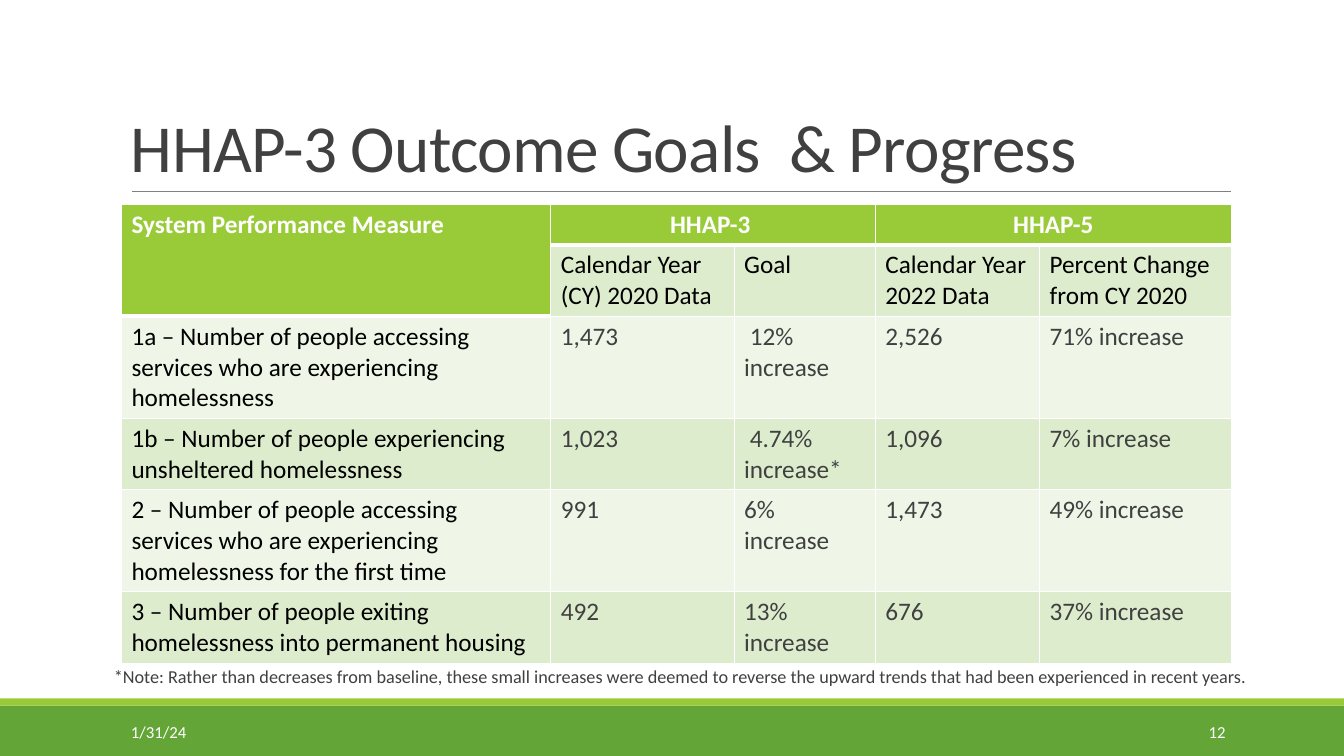
import pptx
import pptx.util
import pptx.dml.color
import pptx.enum.shapes
import pptx.enum.text
import pptx.oxml
import pptx.oxml.ns
import lxml.etree

Cm = pptx.util.Cm
Pt = pptx.util.Pt
RGBColor = pptx.dml.color.RGBColor
ALIGN = pptx.enum.text.PP_ALIGN
ANCHOR = pptx.enum.text.MSO_ANCHOR
qn = pptx.oxml.ns.qn

GREEN = RGBColor(0x63, 0xA5, 0x37)
LIME = RGBColor(0x99, 0xCB, 0x38)
MINT = RGBColor(0xDE, 0xEC, 0xCE)
PALE = RGBColor(0xEF, 0xF6, 0xE8)
WHITE = RGBColor(0xFF, 0xFF, 0xFF)
BLACK = RGBColor(0, 0, 0)
DARK = RGBColor(0x40, 0x40, 0x40)
GRAY = RGBColor(0x80, 0x80, 0x80)

WIDE, TALL = 33.87, 19.05
COLS = [10.82, 4.62, 3.56, 4.14, 4.83]
ONE, TWO, THREE = 1.03, 1.8, 2.57
ROWS = [ONE, TWO, THREE, TWO, THREE, TWO]
DATA = [
    ["System Performance Measure", "HHAP-3 ", "", "HHAP-5", ""],
    ["", "Calendar Year (CY) 2020 Data", "Goal",
     "Calendar Year 2022 Data", "Percent Change from CY 2020"],
    ["1a – Number of people accessing services who are experiencing homelessness",
     "1,473", " 12% increase", "2,526", "71% increase"],
    ["1b – Number of people experiencing unsheltered homelessness",
     "1,023", " 4.74% increase*", "1,096", "7% increase"],
    ["2 – Number of people accessing services who are experiencing "
     "homelessness for the first time",
     "991", "6% increase", "1,473", "49% increase"],
    ["3 – Number of people exiting homelessness into permanent housing",
     "492", "13% increase", "676", "37% increase"],
]
SPANS = [((0, 0), (1, 0)), ((0, 1), (0, 2)), ((0, 3), (0, 4))]


def write(frame, text, size=18, color=DARK, bold=False, align=ALIGN.LEFT,
          lead=None, before=None, after=None, track=None):
    para = frame.paragraphs[0]
    para.alignment = align
    para.line_spacing = lead
    para.space_before = before
    para.space_after = after
    run = para.add_run()
    run.text = text
    run.font.name = "Calibri"
    run.font.size = Pt(size)
    run.font.bold = bold
    run.font.color.rgb = color
    if track is not None:
        run._r.get_or_add_rPr().set("spc", str(track))


def is_head(row, col):
    return row == 0 or (row == 1 and col == 0)


class Deck:
    def __init__(self):
        self.show = pptx.Presentation()
        self.show.slide_width = Cm(WIDE)
        self.show.slide_height = Cm(TALL)
        self.slide = self.show.slides.add_slide(self.show.slide_layouts[6])
        self.shapes = self.slide.shapes

    def band(self, top, high, color):
        kind = pptx.enum.shapes.MSO_SHAPE.RECTANGLE
        band = self.shapes.add_shape(kind, 0, Cm(top), Cm(WIDE), Cm(high))
        band.shadow.inherit = False
        band.fill.solid()
        band.fill.fore_color.rgb = color
        band.line.fill.background()

    def rule(self, left, right, top):
        kind = pptx.enum.shapes.MSO_CONNECTOR.STRAIGHT
        rule = self.shapes.add_connector(kind, Cm(left), Cm(top), Cm(right), Cm(top))
        rule.line.color.rgb = GRAY
        rule.line.width = Pt(0.5)
        lxml.etree.SubElement(rule._element.spPr, qn("a:effectLst"))

    def label(self, text, left, top, wide, high, anchor=ANCHOR.TOP, side=0.25, **style):
        box = self.shapes.add_textbox(Cm(left), Cm(top), Cm(wide), Cm(high))
        frame = box.text_frame
        frame.word_wrap = True
        frame.vertical_anchor = anchor
        frame.margin_left = frame.margin_right = Cm(side)
        write(frame, text, **style)

    def edge(self, cell, side, width):
        props = cell._tc.get_or_add_tcPr()
        line = lxml.etree.SubElement(props, qn("a:ln" + side), w=str(Pt(width)))
        fill = lxml.etree.SubElement(line, qn("a:solidFill"))
        lxml.etree.SubElement(fill, qn("a:srgbClr"), val=str(WHITE))

    def cell(self, cell, row, col, text):
        head = is_head(row, col)
        below = row > 0 and is_head(row - 1, col) and not head
        for side, width in (("L", 1), ("R", 1), ("T", 3 if below else 1),
                            ("B", 3 if head else 1)):
            self.edge(cell, side, width)
        cell.fill.solid()
        cell.fill.fore_color.rgb = LIME if head else MINT if row % 2 else PALE
        if not text:
            return
        color = WHITE if head else BLACK if row == 1 or col == 0 else DARK
        align = ALIGN.CENTER if row == 0 and col else ALIGN.LEFT
        write(cell.text_frame, text, color=color, bold=head, align=align)

    def table(self, left, top):
        table = self.shapes.add_table(
            len(ROWS), len(COLS), Cm(left), Cm(top), Cm(sum(COLS)), Cm(sum(ROWS))).table
        for col, wide in zip(table.columns, COLS):
            col.width = Cm(wide)
        for row, high in zip(table.rows, ROWS):
            row.height = Cm(high)
        for row, texts in enumerate(DATA):
            for col, text in enumerate(texts):
                self.cell(table.cell(row, col), row, col, text)
        for first, last in SPANS:
            table.cell(*first).merge(table.cell(*last))


def main():
    deck = Deck()
    deck.band(17.78, 1.27, GREEN)
    deck.band(17.6, 0.18, LIME)
    deck.rule(3.33, 31.01, 4.83)
    deck.label("HHAP-3 Outcome Goals  & Progress", 3.05, 0.79, 27.94, 4.04,
               anchor=ANCHOR.BOTTOM, size=48, lead=0.85, track=-50)
    deck.table(3.06, 5.14)
    deck.label("*Note: Rather than decreases from baseline, these small increases were "
               "deemed to reverse the upward trends that had been experienced in recent years.",
               2.87, 16.71, 28.93, 2.18, side=0, size=13,
               lead=0.9, before=Pt(12), after=Pt(2))
    deck.label("12", 27.51, 17.93, 3.63, 1.02, anchor=ANCHOR.MIDDLE,
               size=12, color=WHITE, align=ALIGN.RIGHT)
    deck.label("1/31/24", 3.05, 17.93, 6.86, 1.02, anchor=ANCHOR.MIDDLE,
               size=12, color=WHITE)
    deck.show.save("out.pptx")


if __name__ == "__main__":
    main()
